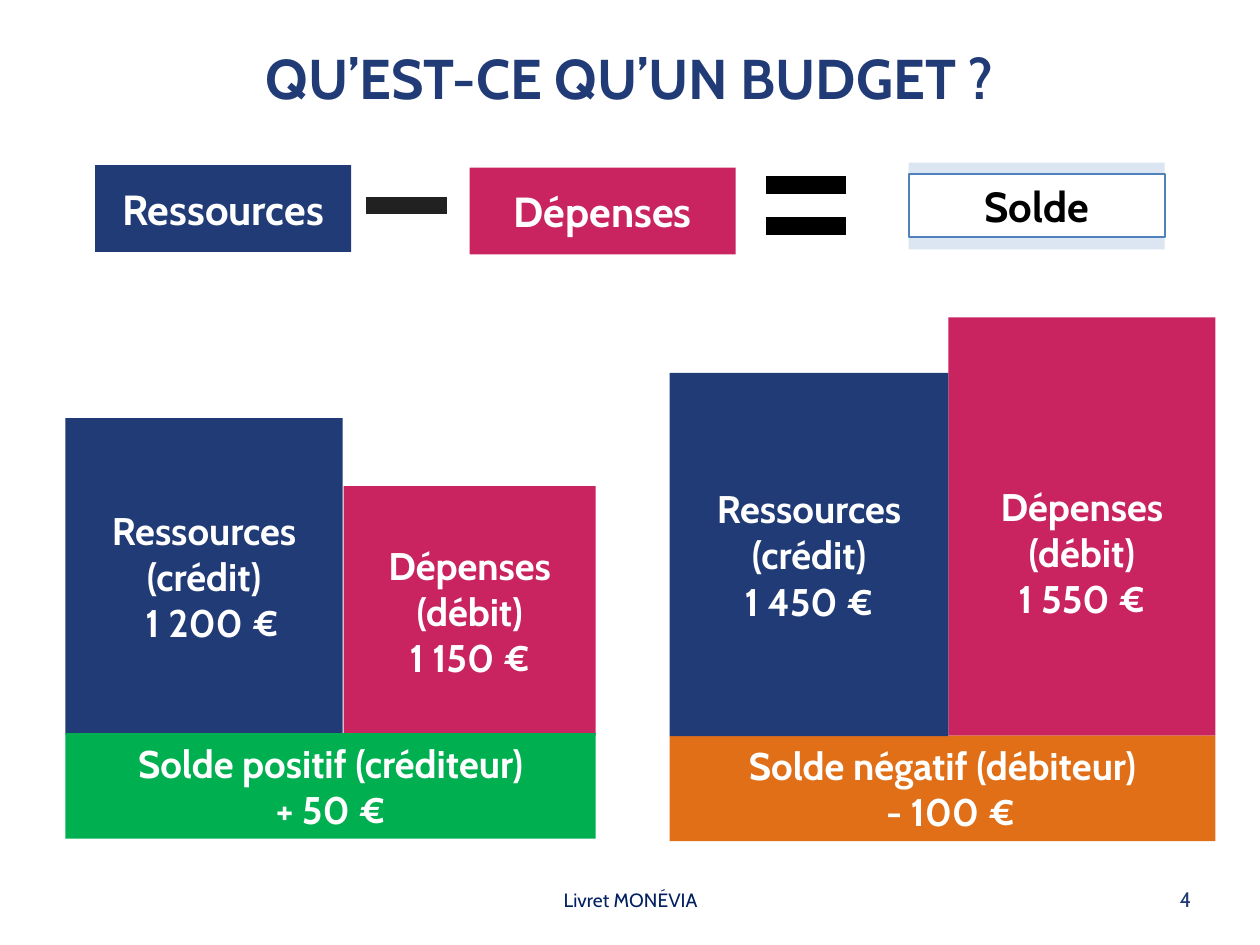
"""Build the slide that explains what a budget is."""
from pptx import Presentation
from pptx.dml.color import RGBColor
from pptx.enum.shapes import MSO_SHAPE as Preset
from pptx.enum.text import MSO_ANCHOR as Anchor, PP_ALIGN as Align
from pptx.util import Cm, Pt

COLORS = {
    "navy": "213B76", "footer": "002060", "pink": "C92360", "green": "00B050",
    "orange": "E06F17", "pale": "DCE6F2", "outline": "4F81BD",
    "charcoal": "212121", "black": "000000", "white": "FFFFFF",
}
INSET = 0.13


def write_text(shape, text, size=22, color="white", bold=True, align=Align.CENTER,
               anchor=Anchor.MIDDLE, wrap=True, inset=INSET, top_inset=INSET, last_indent=0):
    frame = shape.text_frame
    frame.word_wrap = wrap
    frame.vertical_anchor = anchor
    frame.margin_left = frame.margin_right = Cm(inset)
    frame.margin_top, frame.margin_bottom = Cm(top_inset), Cm(INSET)
    frame.text = text
    for paragraph in frame.paragraphs:
        paragraph.alignment = align
        font = paragraph.runs[0].font
        font.name, font.size, font.bold = "Cabin", Pt(size), bold
        font.color.rgb = RGBColor.from_string(COLORS[color])
    if last_indent:
        properties = frame.paragraphs[-1]._p.get_or_add_pPr()
        properties.set("marL", str(Cm(last_indent)))


def paint(shape, fill, line=None, width=1):
    shape.shadow.inherit = False
    shape.fill.solid()
    shape.fill.fore_color.rgb = RGBColor.from_string(COLORS[fill])
    if line:
        shape.line.color.rgb = RGBColor.from_string(COLORS[line])
        shape.line.width = Pt(width)
    else:
        shape.line.fill.background()


presentation = Presentation()
presentation.slide_width, presentation.slide_height = Cm(25.4), Cm(19.05)
slide = presentation.slides.add_slide(presentation.slide_layouts[6])
shapes = slide.shapes

labels = [
    ("QU’EST-CE QU’UN BUDGET ?", (3.51, 0.74, 18.39, 1.83),
     dict(size=32, color="navy", anchor=Anchor.TOP, inset=0.25)),
    ("Livret MONÉVIA", (8.69, 17.78, 8.05, 0.74),
     dict(size=11, color="footer", bold=False)),
    ("4", (23.65, 17.75, 0.48, 0.76),
     dict(size=12, color="navy", bold=False, align=Align.RIGHT, wrap=False)),
]
for text, box, style in labels:
    write_text(shapes.add_textbox(*map(Cm, box)), text, **style)

budget_blocks = [
    ("Ressources\n(crédit)\n1 200 €", "navy", (1.32, 8.43, 5.59, 6.38), dict(last_indent=0.32)),
    ("Dépenses\n(débit)\n1 150 €", "pink", (6.93, 9.8, 5.08, 5.03), {}),
    ("Solde positif (créditeur)\n+ 50 €", "green", (1.32, 14.78, 10.69, 2.13), {}),
    ("Dépenses\n(débit)\n1 550 €", "pink", (19.12, 6.4, 5.38, 8.43), dict(top_inset=1.16)),
    ("Solde négatif (débiteur)\n- 100 €", "orange", (13.5, 14.83, 11, 2.13),
     dict(last_indent=0.32)),
    ("Ressources\n(crédit)\n1 450 €", "navy", (13.5, 7.52, 5.62, 7.32), {}),
]
formula_blocks = [
    ("Dépenses", "pink", (9.47, 3.38, 5.36, 1.75), dict(size=24)),
    ("Ressources", "navy", (1.92, 3.33, 5.16, 1.75), dict(size=24)),
    ("", "pale", (18.32, 3.28, 5.16, 1.75), {}),
    ("Solde", "white", (18.32, 3.51, 5.16, 1.27), dict(size=24, color="black")),
]
for text, fill, box, style in budget_blocks + formula_blocks:
    block = shapes.add_shape(Preset.RECTANGLE, *map(Cm, box))
    paint(block, fill, line="outline" if text == "Solde" else None)
    if text:
        write_text(block, text, **style)

minus = shapes.add_shape(Preset.RECTANGLE, Cm(7.34), Cm(3.94), Cm(1.7), Cm(0.41))
paint(minus, "charcoal", line="white", width=2)

left, right, bar_height = Cm(15.4), Cm(17.1), Cm(0.43)
bar_tops = [Cm(3.51), Cm(4.35)]
builder = shapes.build_freeform(left, bar_tops[0])
for top in bar_tops:
    if top != bar_tops[0]:
        builder.move_to(left, top)
    bottom = top + bar_height
    builder.add_line_segments([(right, top), (right, bottom), (left, bottom)], close=True)
paint(builder.convert_to_shape(), "black", line="white", width=2)

presentation.save("out.pptx")
